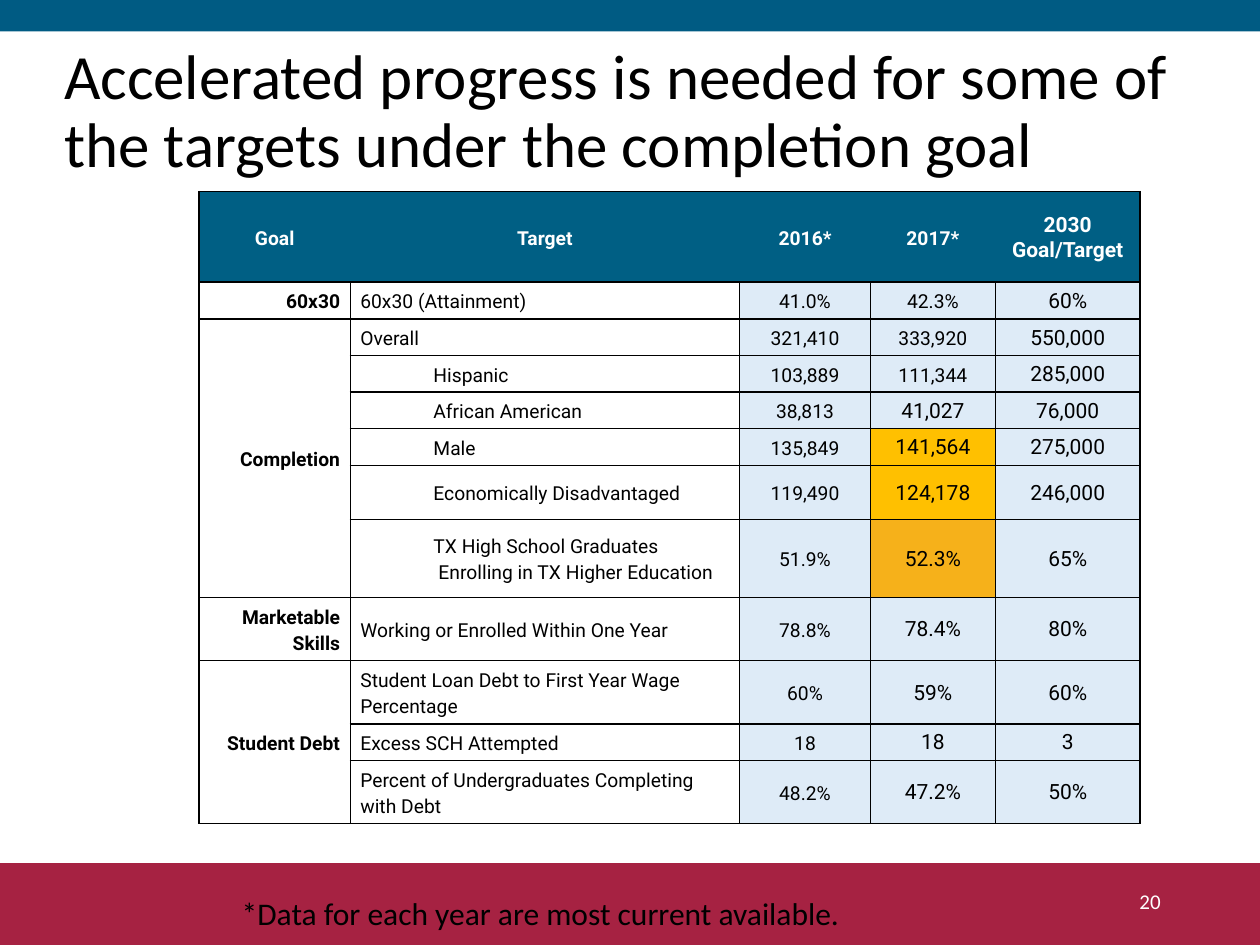
from typing import NamedTuple

from lxml.etree import SubElement
from pptx import Presentation
from pptx.dml.color import RGBColor
from pptx.enum.shapes import MSO_SHAPE as Shape
from pptx.enum.text import MSO_ANCHOR as Anchor, PP_ALIGN as Align
from pptx.oxml.ns import qn
from pptx.util import Inches, Pt

BLACK = RGBColor(0x00, 0x00, 0x00)
WHITE = RGBColor(0xFF, 0xFF, 0xFF)
BLUE = RGBColor(0x00, 0x5B, 0x83)
RED = RGBColor(0xA6, 0x22, 0x42)
HEAD = RGBColor(0x00, 0x5F, 0x84)
PALE = RGBColor(0xDE, 0xEB, 0xF7)
GOLD = RGBColor(0xFF, 0xC0, 0x00)
AMBER = RGBColor(0xF6, 0xB1, 0x1A)


class Row(NamedTuple):
    goal: str
    target: str
    old: str
    new: str
    aim: str
    high: float
    span: int = 1
    sub: bool = False
    mark: RGBColor = PALE


class Look(NamedTuple):
    size: int = 11
    bold: bool = False
    color: RGBColor = BLACK
    align: Align = Align.CENTER
    fill: RGBColor | None = None
    tight: bool = False
    sub: bool = False
    sides: str = "LRTB"


TITLE = ("Accelerated progress is needed for some of "
         "the targets under the completion goal")
NOTE = "*Data for each year are most current available."
HEADS = ["Goal", "Target", "2016*", "2017*", "2030\nGoal/Target"]
WIDTHS = [1.2, 3.09, 1.04, 0.99, 1.15]
TOP = 0.72
ROWS = [
    Row("60x30", "60x30 (Attainment)", "41.0%", "42.3%", "60%", 0.28),
    Row("Completion", "Overall", "321,410", "333,920", "550,000", 0.28, span=6),
    Row("", "Hispanic", "103,889", "111,344", "285,000", 0.28, sub=True),
    Row("", "African American", "38,813", "41,027", "76,000", 0.28, sub=True),
    Row("", "Male", "135,849", "141,564", "275,000", 0.28, sub=True, mark=GOLD),
    Row("", "Economically Disadvantaged", "119,490", "124,178", "246,000", 0.43,
        sub=True, mark=GOLD),
    Row("", "TX High School Graduates\nEnrolling in TX Higher Education",
        "51.9%", "52.3%", "65%", 0.62, sub=True, mark=AMBER),
    Row("Marketable Skills", "Working or Enrolled Within One Year",
        "78.8%", "78.4%", "80%", 0.49),
    Row("Student Debt", "Student Loan Debt to First Year Wage Percentage",
        "60%", "59%", "60%", 0.49, span=3),
    Row("", "Excess SCH Attempted", "18", "18", "3", 0.28),
    Row("", "Percent of Undergraduates Completing with Debt",
        "48.2%", "47.2%", "50%", 0.49),
]
TIGHT_FROM = 4  # first row whose 2017 figure is set like the goal column


def add_band(slide, top: float, high: float, color: RGBColor) -> None:
    band = slide.shapes.add_shape(
        Shape.RECTANGLE, 0, Inches(top), Inches(10), Inches(high))
    band.shadow.inherit = False
    band.fill.solid()
    band.fill.fore_color.rgb = color
    band.line.fill.background()


def add_run(para, text: str, font: str, size: int, color: RGBColor,
            bold: bool = False) -> None:
    run = para.add_run()
    run.text = text
    run.font.name = font
    run.font.size = Pt(size)
    run.font.bold = bold
    run.font.color.rgb = color


def add_text(slide, box: tuple, text: str, size: int, color: RGBColor = BLACK,
             align: Align = Align.LEFT, anchor: Anchor = Anchor.MIDDLE,
             space: float = 1.0) -> None:
    frame = slide.shapes.add_textbox(*map(Inches, box)).text_frame
    frame.word_wrap = True
    frame.vertical_anchor = anchor
    para = frame.paragraphs[0]
    para.alignment = align
    para.line_spacing = space
    add_run(para, text, "Calibri", size, color)


def add_edges(cell, sides: str) -> None:
    props = cell._tc.get_or_add_tcPr()
    for side in "LRTB":
        line = SubElement(props, qn(f"a:ln{side}"), w=str(Pt(1)))
        if side in sides:
            fill = SubElement(line, qn("a:solidFill"))
            SubElement(fill, qn("a:srgbClr"), val=str(BLACK))
        else:
            SubElement(line, qn("a:noFill"))


def fill_cell(cell, text: str, look: Look) -> None:
    add_edges(cell, look.sides)
    if look.fill is None:
        cell.fill.background()
    else:
        cell.fill.solid()
        cell.fill.fore_color.rgb = look.fill
    cell.vertical_anchor = Anchor.MIDDLE
    wide, tall, base = (0.01, 0.01, 0) if look.tight else (0.08, 0.04, 0.04)
    cell.margin_left = cell.margin_right = Inches(wide)
    cell.margin_top, cell.margin_bottom = Inches(tall), Inches(base)

    para = cell.text_frame.paragraphs[0]
    para.alignment = look.align
    if not look.tight:
        para.line_spacing = 1.15
    if look.sub:
        # Later lines sit slightly further in than the first
        props = para._p.get_or_add_pPr()
        props.set("marL", str(Inches(0.62)))
        props.set("indent", str(Inches(-0.04)))
    for i, part in enumerate(text.split("\n")):
        if i:
            para.add_line_break()
        add_run(para, part, "Roboto", look.size, look.color, look.bold)


def add_grid(slide) -> None:
    highs = [TOP] + [row.high for row in ROWS]
    table = slide.shapes.add_table(
        len(highs), len(WIDTHS), Inches(1.58), Inches(1.52),
        Inches(sum(WIDTHS)), Inches(sum(highs))).table
    table.horz_banding = False
    for col, wide in zip(table.columns, WIDTHS):
        col.width = Inches(wide)
    for line, high in zip(table.rows, highs):
        line.height = Inches(high)

    # Heading row: outer edges only
    last = len(HEADS) - 1
    for c, text in enumerate(HEADS):
        sides = "TB" + ("L" if c == 0 else "") + ("R" if c == last else "")
        tight = c == last
        fill_cell(table.cell(0, c), text, Look(
            12 if tight else 11, True, WHITE, fill=HEAD, tight=tight, sides=sides))

    # Body rows
    plain = Look(fill=PALE)
    close = Look(12, fill=PALE, tight=True)
    for r, row in enumerate(ROWS, 1):
        new = close if r >= TIGHT_FROM else plain
        looks = [Look(bold=True, align=Align.RIGHT),
                 Look(align=Align.LEFT, sub=row.sub),
                 plain, new._replace(fill=row.mark), close]
        for c, (text, look) in enumerate(zip(row[:5], looks)):
            if text:
                fill_cell(table.cell(r, c), text, look)
            else:
                add_edges(table.cell(r, c), look.sides)
        if row.span > 1:
            table.cell(r, 0).merge(table.cell(r + row.span - 1, 0))


def main() -> None:
    deck = Presentation()
    deck.slide_width, deck.slide_height = Inches(10), Inches(7.5)
    slide = deck.slides.add_slide(deck.slide_layouts[6])

    # Bands and title
    add_band(slide, 6.85, 0.65, RED)
    add_band(slide, 0, 0.25, BLUE)
    add_text(slide, (0.41, 0.3, 9.38, 1.19), TITLE, 36, space=0.9)

    # Progress table
    add_grid(slide)

    # Page number and footnote
    add_text(slide, (7.06, 6.95, 2.25, 0.4), "20", 12, WHITE, Align.RIGHT)
    add_text(slide, (1.82, 7.05, 6.57, 0.4), NOTE, 18, anchor=Anchor.TOP)
    deck.save("out.pptx")


if __name__ == "__main__":
    main()
